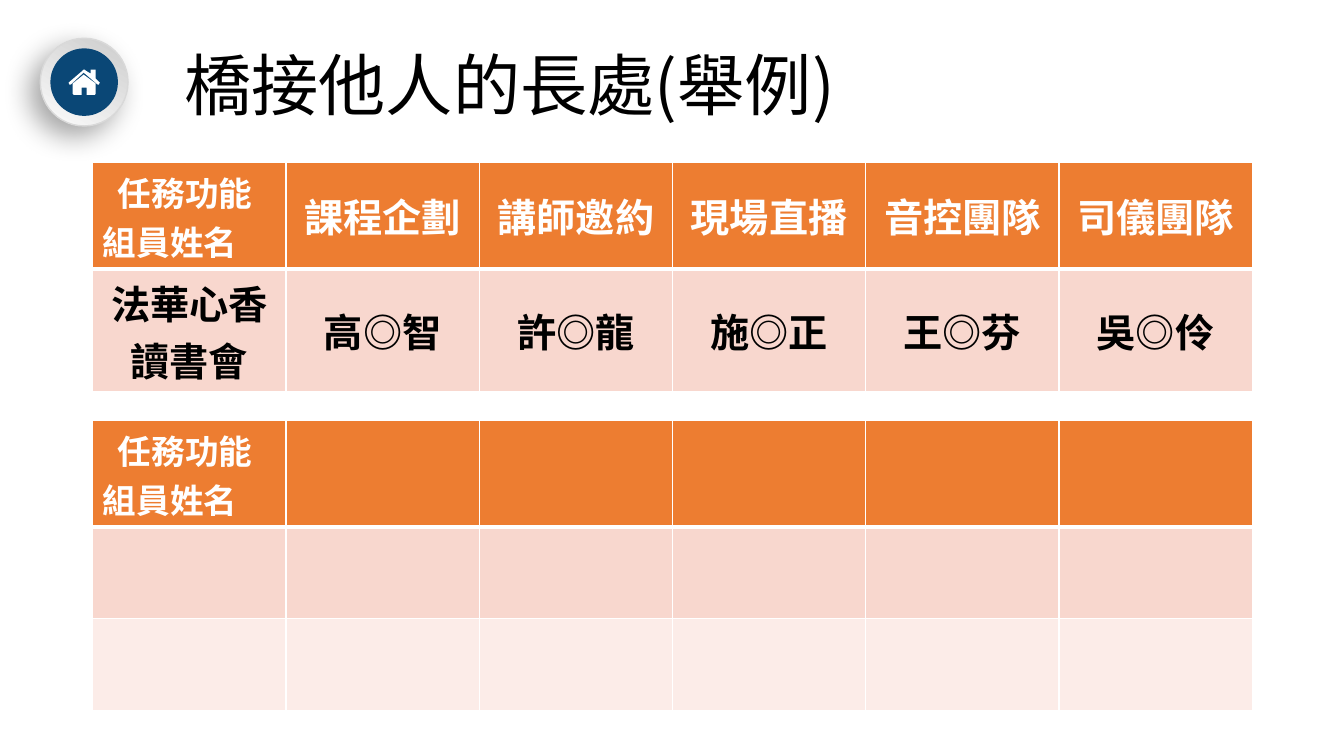
from dataclasses import dataclass

from lxml.etree import SubElement
from pptx import Presentation
from pptx.dml.color import RGBColor
from pptx.enum.shapes import MSO_SHAPE
from pptx.enum.text import MSO_ANCHOR, PP_ALIGN
from pptx.oxml.ns import qn
from pptx.util import Inches, Pt


@dataclass(frozen=True)
class Theme:
    font: str = "Noto Sans CJK SC"
    black: str = "000000"
    white: str = "FFFFFF"
    navy: str = "0A4776"
    rim: str = "D9D9D9"
    dark: str = "CCCCCC"
    light: str = "FCFCFC"
    head: str = "ED7D31"
    bands: tuple = ("F8D7CE", "FCECE8")
    title: int = 48
    label: int = 28
    corner: int = 24


THEME = Theme()
COLS = 6
CORNER = ["任務功能", "組員姓名"]
TASKS = ["課程企劃", "講師邀約", "現場直播", "音控團隊", "司儀團隊"]
TEAM = ["法華心香讀書會", "高◎智", "許◎龍", "施◎正", "王◎芬", "吳◎伶"]

# House outline in hundredths of an inch from the icon's top left corner
ROOF = [(30, 15), (29, 15), (15, 3), (2, 15), (1, 15), (0, 13), (14, 1),
        (15, 0), (16, 0), (17, 1), (22, 4), (22, 0), (27, 0), (27, 9),
        (31, 13)]
WALLS = [(27, 24), (26, 25), (18, 25), (18, 18), (13, 18), (13, 25), (5, 25),
         (4, 24), (4, 14), (15, 5), (27, 14)]


def rgb(code):
    return RGBColor.from_string(code)


def write(frame, lines, size, color, bold=False, align=PP_ALIGN.LEFT,
          anchor=MSO_ANCHOR.MIDDLE, indent=0, spacing=None):
    """Fill a text frame or cell; indent moves the first line only, in inches."""
    body = getattr(frame, "text_frame", frame)
    body.word_wrap = True
    frame.vertical_anchor = anchor
    for i, line in enumerate(lines):
        para = body.add_paragraph() if i else body.paragraphs[0]
        para.alignment = align
        if spacing:
            para.line_spacing = spacing
        if indent and not i:
            para._p.get_or_add_pPr().set("marL", str(Inches(indent)))
        run = para.add_run()
        run.text = line
        font = run.font
        font.name, font.size, font.bold = THEME.font, Pt(size), bold
        font.color.rgb = rgb(color)
        SubElement(run._r.get_or_add_rPr(), qn("a:ea"), typeface=THEME.font)


def shade(shape):
    """Give the shape a soft shadow towards the lower left."""
    effects = shape._element.spPr.find(qn("a:effectLst"))
    outer = SubElement(effects, qn("a:outerShdw"), blurRad=str(Pt(20)),
                       dist=str(Pt(10)), dir=str(136 * 60000),
                       algn="ctr", rotWithShape="0")
    tint = SubElement(outer, qn("a:srgbClr"), val=THEME.black)
    SubElement(tint, qn("a:alpha"), val="34000")


def disc(slide, left, top, size):
    shape = slide.shapes.add_shape(MSO_SHAPE.OVAL, Inches(left), Inches(top),
                                   Inches(size), Inches(size))
    shape.shadow.inherit = False
    return shape


def badge(slide, left, top, size):
    """Home button: shaded ring, navy disc and white house."""
    ring = disc(slide, left, top, size)
    ring.fill.gradient()
    ring.fill.gradient_angle = 240
    for stop, spot, code in zip(ring.fill.gradient_stops, (0, 1),
                                (THEME.dark, THEME.light)):
        stop.position = spot
        stop.color.rgb = rgb(code)
    ring.line.color.rgb = rgb(THEME.rim)
    ring.line.width = Pt(1)
    shade(ring)

    core = disc(slide, left + 0.1, top + 0.1, size - 0.2)
    core.fill.solid()
    core.fill.fore_color.rgb = rgb(THEME.navy)
    core.line.fill.background()

    pen = slide.shapes.build_freeform(*ROOF[0], scale=Inches(0.01))
    pen.add_line_segments(ROOF[1:])
    pen.move_to(*WALLS[0])
    pen.add_line_segments(WALLS[1:])
    house = pen.convert_to_shape(Inches(left + 0.28), Inches(top + 0.31))
    house.shadow.inherit = False
    house.fill.solid()
    house.fill.fore_color.rgb = rgb(THEME.white)
    house.line.fill.background()


def heading(slide, text, left, top, width, height):
    box = slide.shapes.add_textbox(Inches(left), Inches(top),
                                   Inches(width), Inches(height))
    write(box.text_frame, [text], THEME.title, THEME.black, spacing=0.9)


def paint(cell, row):
    """Set the cell's white borders and its band colour."""
    props = cell._tc.get_or_add_tcPr()
    widths = {"L": 1, "R": 1, "T": 3 if row == 1 else 1,
              "B": 3 if row == 0 else 1}
    for side, width in widths.items():
        line = SubElement(props, qn(f"a:ln{side}"), w=str(Pt(width)))
        SubElement(SubElement(line, qn("a:solidFill")), qn("a:srgbClr"),
                   val=THEME.white)
    cell.fill.solid()
    code = THEME.bands[(row - 1) % 2] if row else THEME.head
    cell.fill.fore_color.rgb = rgb(code)


def roster(slide, left, top, width, heights, tasks=(), team=()):
    """Table of tasks across the top and a team's names below."""
    frame = slide.shapes.add_table(len(heights), COLS, Inches(left),
                                   Inches(top), Inches(width),
                                   Inches(sum(heights)))
    table = frame.table
    for col in table.columns:
        col.width = Inches(width / COLS)
    for r, height in enumerate(heights):
        table.rows[r].height = Inches(height)
        for c in range(COLS):
            paint(table.cell(r, c), r)
    write(table.cell(0, 0), CORNER, THEME.corner, THEME.white, bold=True,
          anchor=MSO_ANCHOR.TOP, indent=0.15)
    for c, task in enumerate(tasks, 1):
        write(table.cell(0, c), [task], THEME.label, THEME.white, bold=True,
              align=PP_ALIGN.CENTER)
    for c, name in enumerate(team):
        write(table.cell(1, c), [name], THEME.label, THEME.black, bold=True,
              align=PP_ALIGN.CENTER,
              anchor=MSO_ANCHOR.MIDDLE if c else MSO_ANCHOR.TOP)


def main():
    deck = Presentation()
    deck.slide_width, deck.slide_height = Inches(13.33), Inches(7.5)
    slide = deck.slides.add_slide(deck.slide_layouts[6])
    badge(slide, 0.4, 0.38, 0.87)
    heading(slide, "橋接他人的長處(舉例)", 1.73, 0.4, 10.69, 0.97)
    roster(slide, 0.92, 1.61, 11.5, [1.06, 1.22], TASKS, TEAM)
    roster(slide, 0.92, 4.17, 11.5, [1.06, 0.91, 0.91])
    deck.save("out.pptx")


if __name__ == "__main__":
    main()
